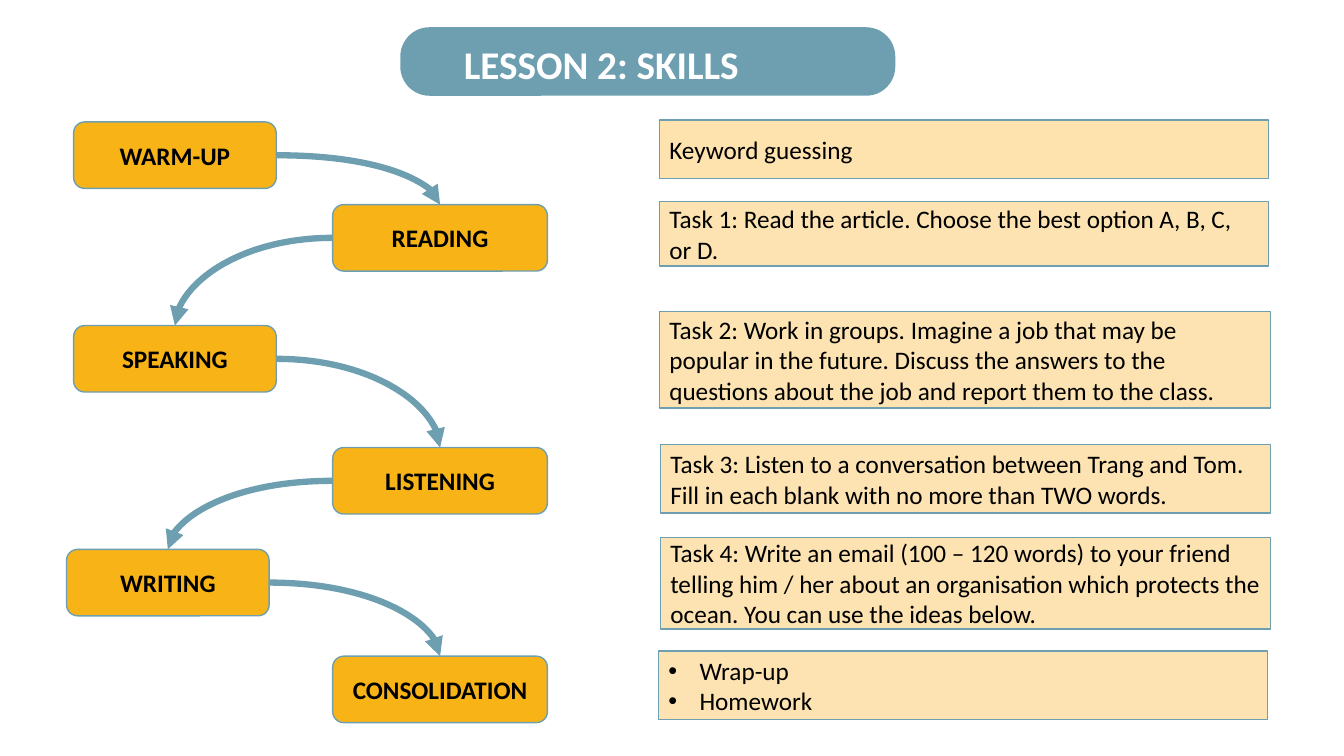
from itertools import pairwise

from lxml.etree import SubElement
from pptx import Presentation
from pptx.dml.color import RGBColor
from pptx.enum.shapes import MSO_CONNECTOR as Connector, MSO_SHAPE as Preset
from pptx.enum.text import MSO_ANCHOR as Anchor, MSO_AUTO_SIZE as AutoSize, PP_ALIGN as Align
from pptx.oxml.ns import qn
from pptx.util import Inches, Pt

TEAL = RGBColor(0x6D, 0x9F, 0xB1)
AMBER = RGBColor(0xF8, 0xB4, 0x17)
GOLD = RGBColor(0xFB, 0xC8, 0x64)
CREAM = RGBColor(0xFE, 0xE3, 0xAF)
BLACK = RGBColor(0, 0, 0)
WHITE = RGBColor(255, 255, 255)

FONT = "Calibri"
GRID = Inches(0.1)  # side of one grid square
LEFT_SITE, RIGHT_SITE, TOP_SITE = 1, 3, 0
STAGE_HEIGHT = 6.6
LEFT_STAGE_WIDTH, RIGHT_STAGE_WIDTH = 20.1, 21.3

# name, column, row, width
STAGES = [
    ("WARM-UP", 7.3, 12.1, LEFT_STAGE_WIDTH),
    ("READING", 33, 20.3, RIGHT_STAGE_WIDTH),
    ("SPEAKING", 7.3, 32.3, LEFT_STAGE_WIDTH),
    ("LISTENING", 33, 44.4, RIGHT_STAGE_WIDTH),
    ("WRITING", 6.6, 54.5, LEFT_STAGE_WIDTH),
    ("CONSOLIDATION", 33, 65.1, RIGHT_STAGE_WIDTH),
]

# lines, column, row, width, height
TASKS = [
    (["Keyword guessing"], 65.4, 11.9, 60.4, 5.8),
    (["Task 1: Read the article. Choose the best option A, B, C, or D."],
     65.4, 20, 60.4, 6.4),
    (["Task 2: Work in groups. Imagine a job that may be popular in the future. "
      "Discuss the answers to the questions about the job and report them to the class."],
     65.4, 30.9, 60.6, 9.6),
    (["Task 3: Listen to a conversation between Trang and Tom. "
      "Fill in each blank with no more than TWO words."],
     65.5, 44.1, 60.5, 6.8),
    (["Task 4: Write an email (100 – 120 words) to your friend telling him / her "
      "about an organisation which protects the ocean. You can use the ideas below."],
     65.5, 53.3, 60.5, 9.1),
    (["Wrap-up", "Homework"], 65.3, 64.6, 60.4, 6.8),
]


class LessonSlide:
    def __init__(self, presentation):
        self.slide = presentation.slides.add_slide(presentation.slide_layouts[5])
        self.shapes = self.slide.shapes

    def place(self, *cells):
        """Turn columns and rows into lengths."""
        return [round(cell * GRID) for cell in cells]

    def add_text(self, paragraph, text, size=18, color=BLACK, bold=False):
        run = paragraph.add_run()
        run.text = text
        run.font.name = FONT
        run.font.size = Pt(size)
        run.font.bold = bold
        run.font.color.rgb = color

    def box(self, preset, cells, fill, alpha=None):
        shape = self.shapes.add_shape(preset, *self.place(*cells))
        shape.shadow.inherit = False
        shape.fill.solid()
        shape.fill.fore_color.rgb = fill
        if alpha is not None:
            color = shape._element.spPr.find(qn("a:solidFill")).find(qn("a:srgbClr"))
            SubElement(color, qn("a:alpha")).set("val", str(alpha * 1000))
        shape.line.color.rgb = TEAL
        shape.line.width = Pt(1)
        shape.text_frame.word_wrap = True
        shape.text_frame.vertical_anchor = Anchor.MIDDLE
        return shape

    def title(self, text):
        banner = self.box(Preset.ROUNDED_RECTANGLE, (39.7, 2.7, 49.1, 6.8), TEAL)
        banner.adjustments[0] = 0.427
        banner.line.fill.background()
        title = self.shapes.title
        title.left, title.top, title.width, title.height = self.place(45, 3.5, 51.5, 5.7)
        self.shapes._spTree.append(title._element)  # in front of the banner
        frame = title.text_frame
        frame.auto_size = AutoSize.NONE
        frame.vertical_anchor = Anchor.TOP
        paragraph = frame.paragraphs[0]
        paragraph.alignment = Align.LEFT
        self.add_text(paragraph, text, 28, WHITE, True)

    def stage(self, name, column, row, width):
        shape = self.box(Preset.ROUNDED_RECTANGLE, (column, row, width, STAGE_HEIGHT), AMBER)
        paragraph = shape.text_frame.paragraphs[0]
        paragraph.alignment = Align.CENTER
        self.add_text(paragraph, name, bold=True)
        return shape

    def task(self, lines, *cells, fill=GOLD, alpha=50):
        frame = self.box(Preset.RECTANGLE, cells, fill, alpha).text_frame
        for index, line in enumerate(lines):
            paragraph = frame.add_paragraph() if index else frame.paragraphs[0]
            paragraph.alignment = Align.LEFT
            if len(lines) > 1:
                self.bullet(paragraph)
            self.add_text(paragraph, line)

    def bullet(self, paragraph):
        properties = paragraph._p.get_or_add_pPr()
        indent = Inches(0.31)
        properties.set("marL", str(indent))
        properties.set("indent", str(-indent))
        SubElement(properties, qn("a:buFont")).set("typeface", "Arial")
        SubElement(properties, qn("a:buChar")).set("char", "•")

    def arrow(self, start, end):
        """Curve from the facing side of one stage to the top of the next."""
        connector = self.shapes.add_connector(Connector.CURVE, 0, 0, 0, 0)
        connector.begin_connect(start, RIGHT_SITE if start.left < end.left else LEFT_SITE)
        connector.end_connect(end, TOP_SITE)
        connector.line.color.rgb = TEAL
        connector.line.width = Pt(4.5)
        SubElement(connector.get_or_add_ln(), qn("a:tailEnd")).set("type", "triangle")
        properties = connector._element.spPr
        properties.find(qn("a:prstGeom")).set("prst", "curvedConnector2")
        SubElement(properties, qn("a:effectLst"))


def main():
    presentation = Presentation()
    presentation.slide_width = Inches(13.33)
    presentation.slide_height = Inches(7.5)
    lesson = LessonSlide(presentation)
    lesson.title("LESSON 2: SKILLS")
    first_task, *other_tasks = TASKS
    lesson.task(*first_task, fill=CREAM, alpha=None)
    for task in other_tasks:
        lesson.task(*task)
    stages = [lesson.stage(*stage) for stage in STAGES]
    for start, end in pairwise(stages):
        lesson.arrow(start, end)
    presentation.save("out.pptx")


if __name__ == "__main__":
    main()
